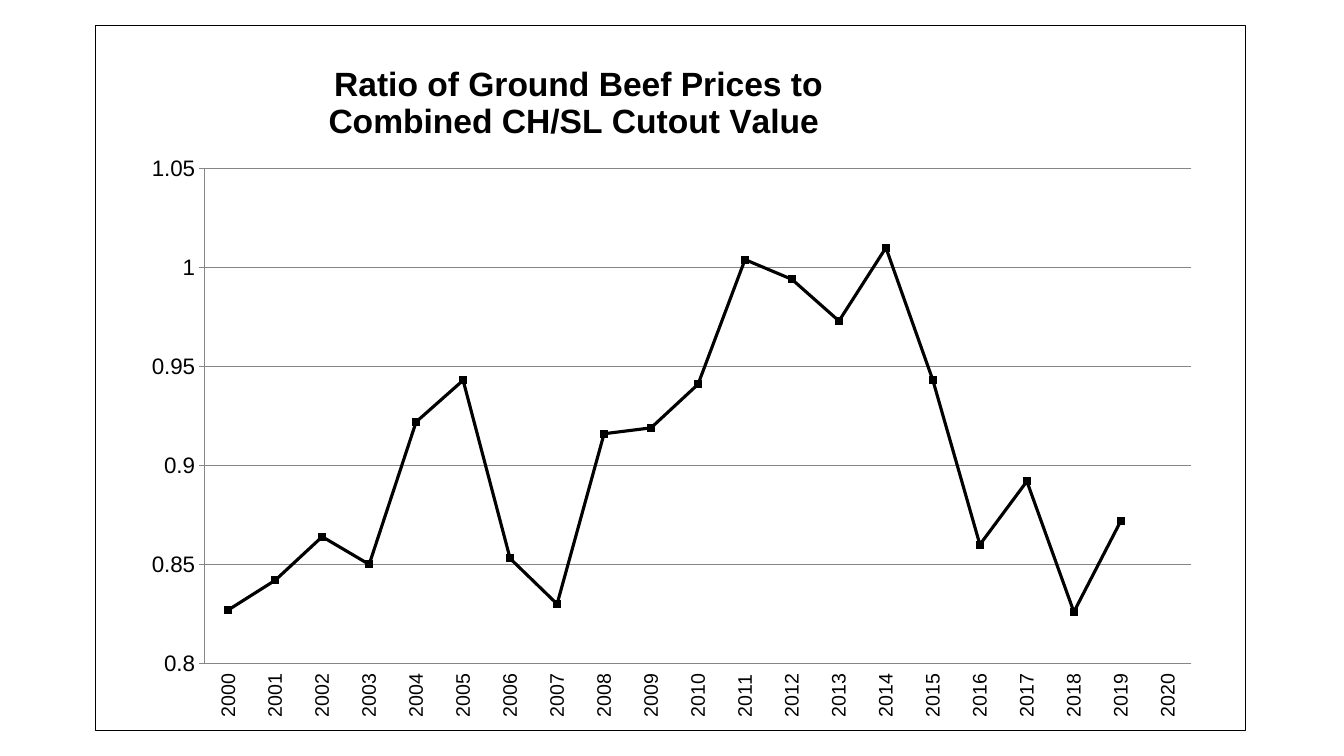
"""Build a slide with a line chart of ground beef prices relative to the cutout value."""
from dataclasses import dataclass
from typing import Any

import pptx
import pptx.chart.data
import pptx.dml.color
import pptx.enum.chart
import pptx.oxml
import pptx.oxml.ns
import pptx.util

EMU_PER_PX = 914400 / 100.8
COLORS = {"ink": "000000", "grid": "868686"}
FONT = "Arial"
TITLE = "Ratio of Ground Beef Prices to\nCombined CH/SL Cutout Value "
YEARS = [str(year) for year in range(2000, 2021)]
RATIOS = [
    0.827, 0.842, 0.864, 0.85, 0.922, 0.943, 0.853, 0.83, 0.916, 0.919, 0.941,
    1.004, 0.994, 0.973, 1.01, 0.943, 0.86, 0.892, 0.826, 0.872, None,
]
TICK = pptx.enum.chart.XL_TICK_MARK
LABELS = pptx.enum.chart.XL_TICK_LABEL_POSITION


@dataclass(frozen=True)
class AxisStyle:
    size: int
    rotation: int
    settings: dict[str, Any]


YEAR_STYLE = AxisStyle(14, -90, {
    "major_tick_mark": TICK.NONE,
    "minor_tick_mark": TICK.NONE,
    "tick_label_position": LABELS.LOW,
    "has_major_gridlines": False,
})
RATIO_STYLE = AxisStyle(16, 0, {
    "major_tick_mark": TICK.OUTSIDE,
    "minor_tick_mark": TICK.NONE,
    "minimum_scale": 0.8,
    "maximum_scale": 1.05,
    "major_unit": 0.05,
    "has_major_gridlines": True,
})


def px(length: int) -> pptx.util.Emu:
    """Turn pixels into EMU."""
    return pptx.util.Emu(round(length * EMU_PER_PX))


def apply(target: Any, settings: dict[str, Any]) -> None:
    """Set each named attribute on the target."""
    for name, value in settings.items():
        setattr(target, name, value)


def style_font(font: Any, size: int, bold: bool = False) -> None:
    """Give a font the slide's typeface and ink."""
    apply(font, {"name": FONT, "size": pptx.util.Pt(size), "bold": bold})
    font.color.rgb = pptx.dml.color.RGBColor.from_string(COLORS["ink"])


def style_line(line: Any, color: str, width: float) -> None:
    """Give a line a solid colour and a width in points."""
    line.color.rgb = pptx.dml.color.RGBColor.from_string(COLORS[color])
    line.width = pptx.util.Pt(width)


def style_axis(axis: Any, style: AxisStyle) -> None:
    """Format an axis, its labels and its gridlines."""
    apply(axis, style.settings)
    apply(axis.tick_labels, {"number_format": "General", "number_format_is_linked": False})
    style_font(axis.tick_labels.font, style.size)
    style_line(axis.format.line, "grid", 0.75)
    if axis.has_major_gridlines:
        style_line(axis.major_gridlines.format.line, "grid", 0.75)
    body = axis._element.find(".//" + pptx.oxml.ns.qn("a:bodyPr"))
    body.set("rot", str(style.rotation * 60000))
    body.set("vert", "horz")


def place(parent: Any, index: int, fractions: dict[str, float], inner: bool = False) -> None:
    """Give a chart part a manual layout in fractions of the chart."""
    for old in parent.findall(pptx.oxml.ns.qn("c:layout")):
        parent.remove(old)
    target = '<c:layoutTarget val="inner"/>' if inner else ""
    modes = "".join(f'<c:{key}Mode val="edge"/>' for key in ("x", "y"))
    values = "".join(f'<c:{key} val="{value}"/>' for key, value in fractions.items())
    parent.insert(index, pptx.oxml.parse_xml(
        f'<c:layout {pptx.oxml.ns.nsdecls("c")}><c:manualLayout>'
        f"{target}{modes}{values}</c:manualLayout></c:layout>"
    ))


def add_border(chart: Any) -> None:
    """Outline the whole chart area."""
    chart._chartSpace.find(pptx.oxml.ns.qn("c:chart")).addnext(pptx.oxml.parse_xml(
        f'<c:spPr {pptx.oxml.ns.nsdecls("c", "a")}><a:noFill/><a:ln w="9525"><a:solidFill>'
        f'<a:srgbClr val="{COLORS["ink"]}"/></a:solidFill></a:ln></c:spPr>'
    ))


def add_ratio_chart(slide: Any) -> None:
    """Add the chart of yearly price ratios."""
    data = pptx.chart.data.CategoryChartData()
    data.categories = YEARS
    data.add_series("Series 1", RATIOS)
    chart = slide.shapes.add_chart(
        pptx.enum.chart.XL_CHART_TYPE.LINE_MARKERS, px(95), px(25), px(1151), px(706), data
    ).chart
    chart.has_legend = False
    style_font(chart.font, 18)
    add_border(chart)

    heading = chart.chart_title
    heading.text_frame.text = TITLE
    for paragraph in heading.text_frame.paragraphs:
        style_font(paragraph.runs[0].font, 24, bold=True)
    place(heading._element, 1, {"x": 0.2, "y": 0.05})
    plot_area = chart._chartSpace.find(".//" + pptx.oxml.ns.qn("c:plotArea"))
    place(plot_area, 0, {"x": 0.095, "y": 0.203, "w": 0.858, "h": 0.702}, inner=True)

    style_axis(chart.category_axis, YEAR_STYLE)
    style_axis(chart.value_axis, RATIO_STYLE)

    chart.plots[0].vary_by_categories = False
    ratio = chart.plots[0].series[0]
    ratio.smooth = False
    style_line(ratio.format.line, "ink", 2.25)
    apply(ratio.marker, {"style": pptx.enum.chart.XL_MARKER_STYLE.SQUARE, "size": 5})
    ratio.marker.format.fill.solid()
    ratio.marker.format.fill.fore_color.rgb = pptx.dml.color.RGBColor.from_string(COLORS["ink"])
    style_line(ratio.marker.format.line, "ink", 0.75)


def main() -> None:
    """Create and save the presentation."""
    deck = pptx.Presentation()
    apply(deck, {"slide_width": px(1344), "slide_height": px(756)})
    add_ratio_chart(deck.slides.add_slide(deck.slide_layouts[6]))
    deck.save("out.pptx")


if __name__ == "__main__":
    main()
